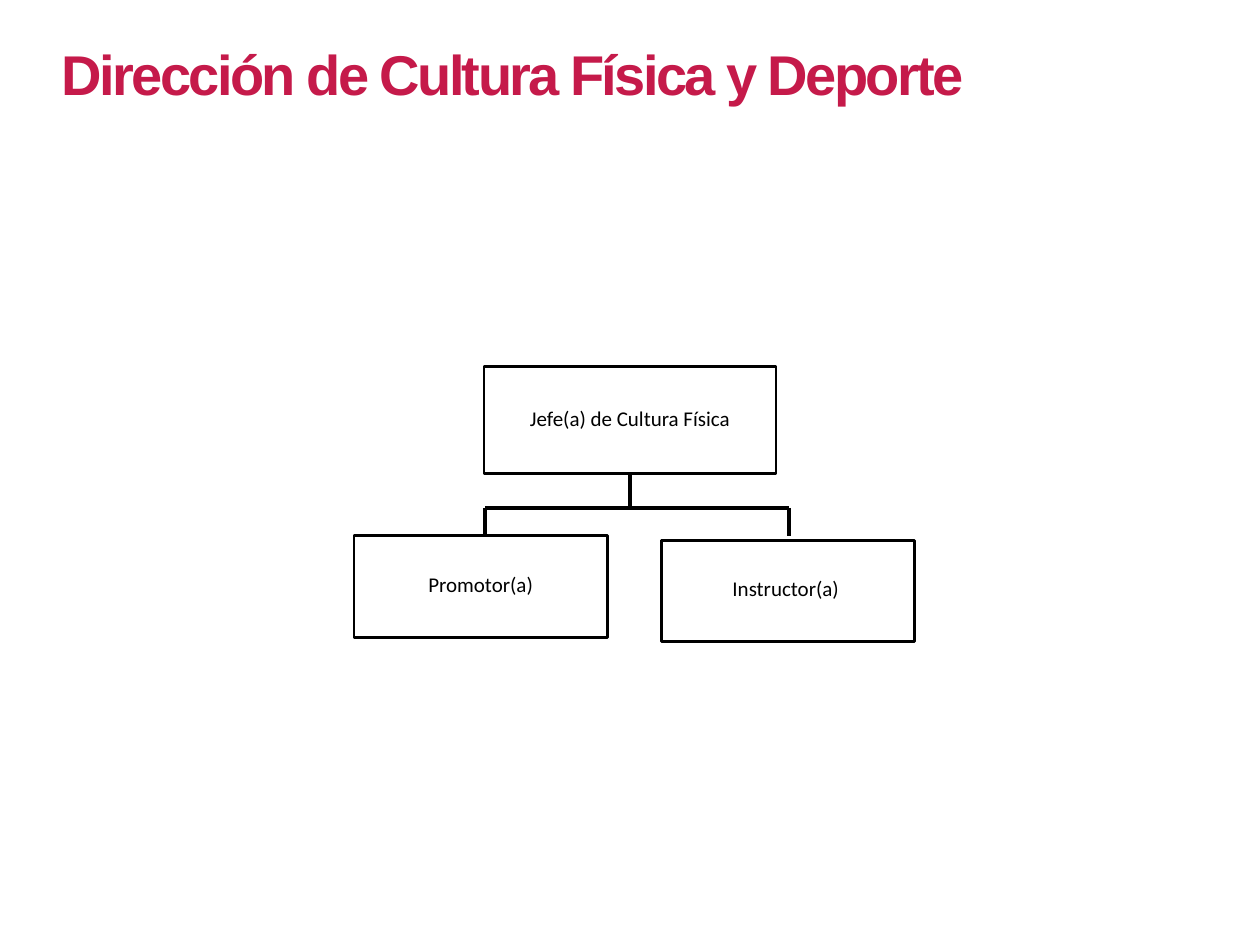
from dataclasses import dataclass

from lxml.etree import SubElement
from pptx import Presentation
from pptx.dml.color import RGBColor
from pptx.enum.shapes import MSO_CONNECTOR, MSO_SHAPE
from pptx.enum.text import MSO_ANCHOR, MSO_AUTO_SIZE, PP_ALIGN
from pptx.oxml.ns import qn
from pptx.shapes.autoshape import Shape
from pptx.shapes.connector import Connector
from pptx.slide import Slide
from pptx.util import Inches, Pt


@dataclass(frozen=True)
class Theme:
    heading: RGBColor = RGBColor(0xC5, 0x1A, 0x4A)
    ink: RGBColor = RGBColor(0, 0, 0)
    paper: RGBColor = RGBColor(0xFF, 0xFF, 0xFF)
    heading_font: str = "Arial"
    post_font: str = "Calibri"
    heading_size: int = 32
    post_size: int = 12
    border: float = 1.5
    branch: float = 2.25


@dataclass(frozen=True)
class Post:
    name: str
    left: float
    top: float
    width: float
    height: float


THEME = Theme()
CHIEF = Post("Jefe(a) de Cultura Física", 3.84, 2.91, 2.32, 0.85)
STAFF = (
    Post("Instructor(a) ", 5.25, 4.29, 2.01, 0.8),
    Post("Promotor(a)", 2.81, 4.25, 2.01, 0.81),
)
RAIL_Y = 4.03
BRANCH_XS = (3.85, 6.26)
BRANCH_END = 4.25


def add_heading(slide: Slide, text: str) -> None:
    heading = slide.shapes.title
    heading.left, heading.top = Inches(0.39), Inches(0.26)
    heading.width, heading.height = Inches(7.69), Inches(0.64)
    frame = heading.text_frame
    frame.text = text
    frame.word_wrap = True
    frame.auto_size = MSO_AUTO_SIZE.SHAPE_TO_FIT_TEXT
    frame.vertical_anchor = MSO_ANCHOR.TOP
    line = frame.paragraphs[0]
    line.alignment = PP_ALIGN.LEFT
    font = line.runs[0].font
    font.name, font.size, font.bold = THEME.heading_font, Pt(THEME.heading_size), True
    font.color.rgb = THEME.heading
    # Tighten the letters by 1.5 points
    line.runs[0]._r.get_or_add_rPr().set("spc", "-150")


def add_post(slide: Slide, post: Post) -> Shape:
    box = slide.shapes.add_shape(
        MSO_SHAPE.RECTANGLE,
        Inches(post.left), Inches(post.top), Inches(post.width), Inches(post.height),
    )
    box.shadow.inherit = False
    box.fill.solid()
    box.fill.fore_color.rgb = THEME.paper
    box.line.color.rgb = THEME.ink
    box.line.width = Pt(THEME.border)
    frame = box.text_frame
    frame.text = post.name
    frame.word_wrap = False
    frame.vertical_anchor = MSO_ANCHOR.MIDDLE
    label = frame.paragraphs[0]
    label.alignment = PP_ALIGN.CENTER
    label.line_spacing = 0.8
    font = label.runs[0].font
    font.name, font.size = THEME.post_font, Pt(THEME.post_size)
    font.color.rgb = THEME.ink
    return box


def add_branch(slide: Slide, x1: float, y1: float, x2: float, y2: float) -> Connector:
    branch = slide.shapes.add_connector(
        MSO_CONNECTOR.STRAIGHT, Inches(x1), Inches(y1), Inches(x2), Inches(y2)
    )
    branch.line.color.rgb = THEME.ink
    branch.line.width = Pt(THEME.branch)
    SubElement(branch._element.spPr, qn("a:effectLst"))
    return branch


def main() -> None:
    deck = Presentation()
    deck.slide_width, deck.slide_height = Inches(10), Inches(7.5)
    slide = deck.slides.add_slide(deck.slide_layouts[5])
    add_heading(slide, "Dirección de Cultura Física y Deporte")

    # Posts
    chief_box = add_post(slide, CHIEF)
    for post in STAFF:
        add_post(slide, post)

    # Stem from the chief, shared rail and one drop to each post below
    chief_x = CHIEF.left + CHIEF.width / 2
    stem = add_branch(slide, chief_x, CHIEF.top + CHIEF.height, chief_x, RAIL_Y)
    stem.begin_connect(chief_box, 2)
    add_branch(slide, BRANCH_XS[0], RAIL_Y, BRANCH_XS[1], RAIL_Y)
    for x in BRANCH_XS:
        add_branch(slide, x, RAIL_Y, x, BRANCH_END)

    deck.save("out.pptx")


if __name__ == "__main__":
    main()
